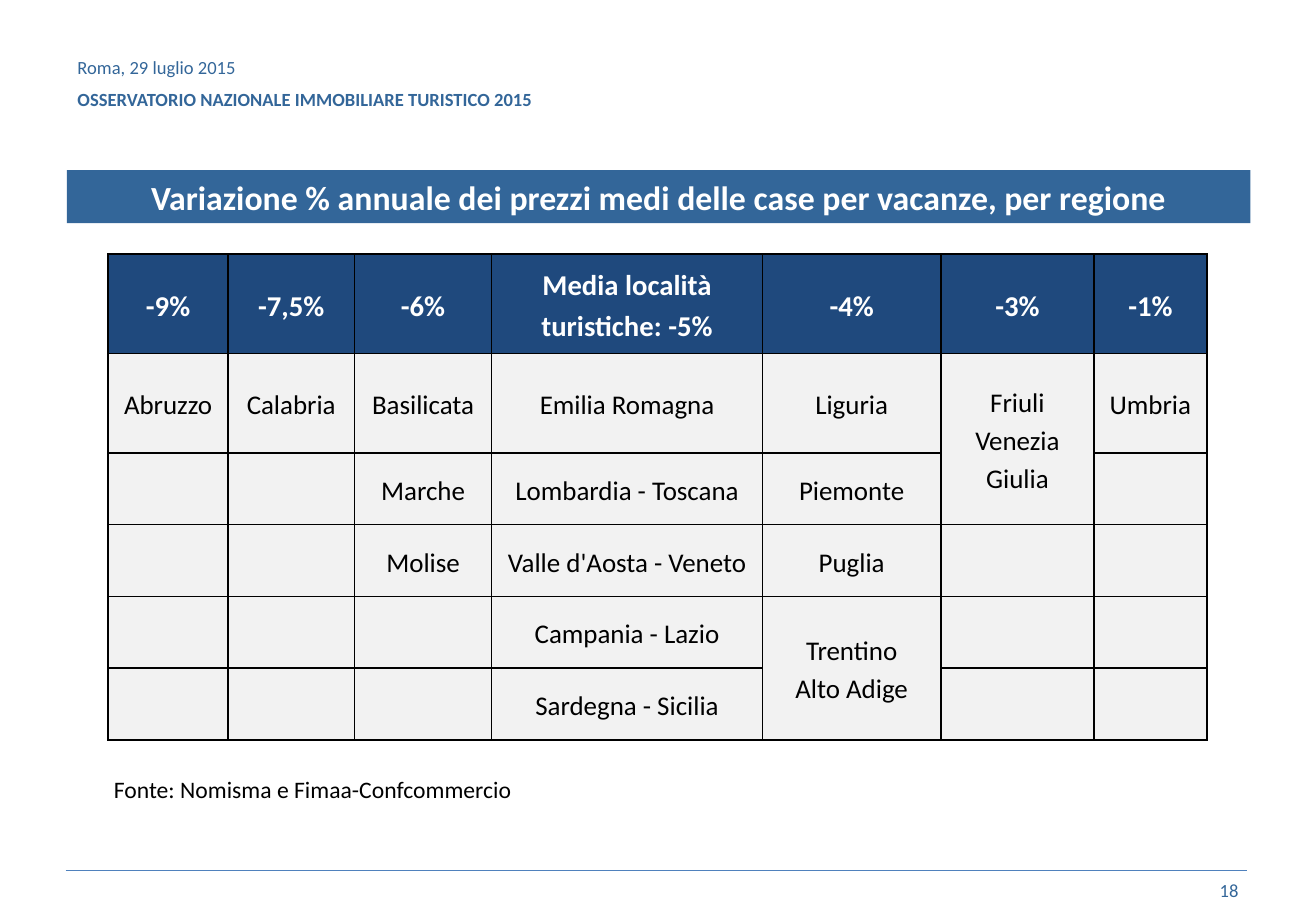
import dataclasses

import lxml.etree
import pptx
import pptx.dml.color
import pptx.enum.shapes
import pptx.enum.text
import pptx.oxml.ns
import pptx.util

Cm = pptx.util.Cm
Pt = pptx.util.Pt
ALIGN = pptx.enum.text.PP_ALIGN
MIDDLE = pptx.enum.text.MSO_ANCHOR.MIDDLE
GROW = pptx.enum.text.MSO_AUTO_SIZE.SHAPE_TO_FIT_TEXT
color = pptx.dml.color.RGBColor.from_string
tag = pptx.oxml.ns.qn


@dataclasses.dataclass
class Theme:
    font: str = "Calibri"
    accent: str = "336699"
    rule: str = "4F81BD"
    header: str = "1F497D"
    body: str = "F2F2F2"
    white: str = "FFFFFF"
    black: str = "000000"
    small: int = 11
    source: int = 14
    cell: int = 16
    cell_header: int = 17
    title: int = 20


theme = Theme()


def write(frame, text, size, ink, bold=False, align=ALIGN.LEFT, spacing=None, before=0):
    """Fill a text frame, one paragraph per line of text; the last can be bold alone."""
    lines = text.split("\n")
    for index, line in enumerate(lines):
        para = frame.paragraphs[0] if index == 0 else frame.add_paragraph()
        para.alignment = align
        if spacing:
            para.line_spacing = spacing
        if index and before:
            para.space_before = Pt(before)
        span = para.add_run()
        span.text = line
        span.font.name = theme.font
        span.font.size = Pt(size)
        span.font.bold = bold == "last" and index == len(lines) - 1 or bold is True
        span.font.color.rgb = color(ink)


def add_border(cell):
    """Draw a thin black line on each side of a table cell."""
    properties = cell._tc.get_or_add_tcPr()
    for position, side in enumerate(("lnL", "lnR", "lnT", "lnB")):
        line = lxml.etree.Element(tag("a:" + side), w=str(Pt(1)))
        fill = lxml.etree.SubElement(line, tag("a:solidFill"))
        lxml.etree.SubElement(fill, tag("a:srgbClr"), val=theme.black)
        properties.insert(position, line)


deck = pptx.Presentation()
deck.slide_width, deck.slide_height = Cm(27.51), Cm(19.05)
page = deck.slides.add_slide(deck.slide_layouts[6])

# Footer rule
rule = page.shapes.add_connector(
    pptx.enum.shapes.MSO_CONNECTOR.STRAIGHT, Cm(1.37), Cm(18.19), Cm(26.06), Cm(18.19))
rule.line.color.rgb = color(theme.rule)
rule.line.width = Pt(0.25)
lxml.etree.SubElement(rule._element.spPr, tag("a:effectLst"))

# Heading, page number and source
heading = "Roma, 29 luglio 2015\nOSSERVATORIO NAZIONALE IMMOBILIARE TURISTICO 2015"
labels = [
    ((1.37, 0.76, 20.4, 1.96), heading, MIDDLE,
     dict(size=theme.small, ink=theme.accent, bold="last", before=6)),
    ((19.71, 18.11, 6.43, 1.02), "18", MIDDLE,
     dict(size=theme.small, ink=theme.accent, align=ALIGN.RIGHT)),
    ((2.13, 16.08, 10.87, 0.86), "Fonte: Nomisma e Fimaa-Confcommercio",
     pptx.enum.text.MSO_ANCHOR.TOP, dict(size=theme.source, ink=theme.black)),
]
for place, text, anchor, style in labels:
    box = page.shapes.add_textbox(*map(Cm, place))
    box.text_frame.word_wrap = True
    box.text_frame.vertical_anchor = anchor
    write(box.text_frame, text, **style)

# Title band
band = page.shapes.add_shape(
    pptx.enum.shapes.MSO_SHAPE.RECTANGLE, Cm(1.4), Cm(3.56), Cm(24.74), Cm(1.11))
band.shadow.inherit = False
band.fill.solid()
band.fill.fore_color.rgb = color(theme.accent)
band.line.fill.background()
band.text_frame.word_wrap = True
band.text_frame.auto_size = GROW
band.text_frame.vertical_anchor = MIDDLE
write(band.text_frame,
      "Variazione % annuale dei prezzi medi delle case per vacanze, per regione",
      theme.title, theme.white, bold=True, align=ALIGN.CENTER)

# Table of regions by price change
regions = [
    ["-9%", "-7,5%", "-6%", "Media località turistiche: -5%", "-4%", "-3%", "-1%"],
    ["Abruzzo", "Calabria", "Basilicata", "Emilia Romagna", "Liguria",
     "Friuli Venezia\nGiulia", "Umbria"],
    ["", "", "Marche", "Lombardia - Toscana", "Piemonte", "", ""],
    ["", "", "Molise", "Valle d'Aosta - Veneto", "Puglia", "", ""],
    ["", "", "", "Campania - Lazio", "Trentino\nAlto Adige", "", ""],
    ["", "", "", "Sardegna - Sicilia", "", "", ""],
]
widths = [2.51, 2.64, 2.87, 5.66, 3.73, 3.2, 2.36]
heights = [2.08] * 2 + [1.5] * 4
graphic = page.shapes.add_table(len(heights), len(widths), Cm(2.26), Cm(5.31),
                                Cm(sum(widths)), Cm(sum(heights)))
table = graphic.table
table.horz_banding = False
for column, width in zip(table.columns, widths):
    column.width = Cm(width)
for row, height in zip(table.rows, heights):
    row.height = Cm(height)

for row, names in enumerate(regions):
    is_header = row == 0
    for column, name in enumerate(names):
        cell = table.cell(row, column)
        cell.fill.solid()
        cell.fill.fore_color.rgb = color(theme.header if is_header else theme.body)
        add_border(cell)
        if name:
            cell.vertical_anchor = MIDDLE
            cell.margin_left = cell.margin_right = Cm(0.13)
            cell.margin_top = cell.margin_bottom = 0
            write(cell.text_frame, name,
                  theme.cell_header if is_header else theme.cell,
                  theme.white if is_header else theme.black,
                  bold=is_header, align=ALIGN.CENTER, spacing=1.15)

# Regions that take two rows
for row, column in ((1, 5), (4, 4)):
    table.cell(row, column).merge(table.cell(row + 1, column))

deck.save("out.pptx")
